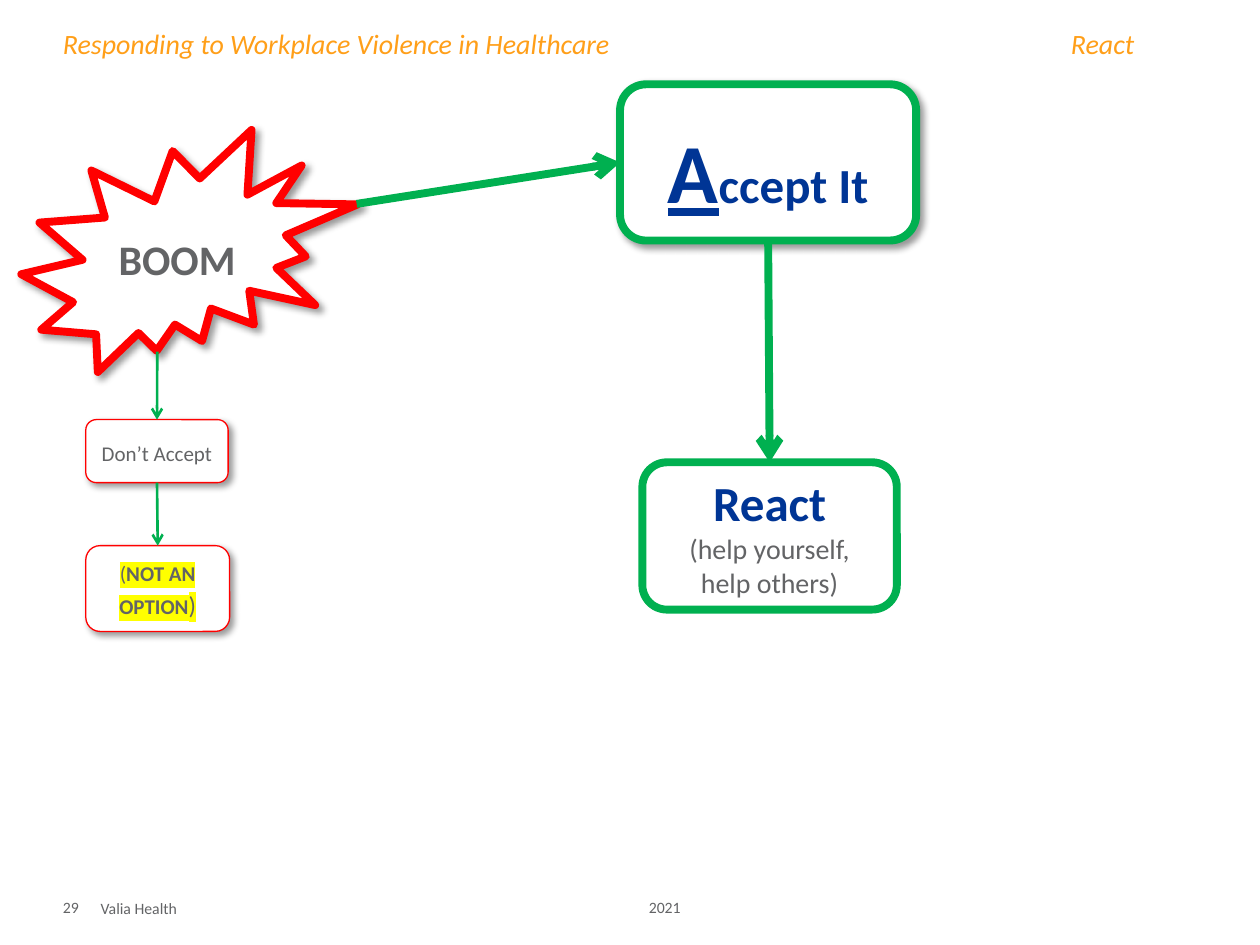
from dataclasses import dataclass

from lxml import etree
from pptx import Presentation
from pptx.dml.color import RGBColor
from pptx.enum.shapes import MSO_CONNECTOR, MSO_SHAPE
from pptx.enum.text import MSO_ANCHOR, PP_ALIGN
from pptx.oxml.ns import qn
from pptx.util import Cm, Pt

BURST, BOX = MSO_SHAPE.EXPLOSION2, MSO_SHAPE.ROUNDED_RECTANGLE
STRAIGHT = MSO_CONNECTOR.STRAIGHT
TOP, MIDDLE, BOTTOM = MSO_ANCHOR.TOP, MSO_ANCHOR.MIDDLE, MSO_ANCHOR.BOTTOM
CENTER = PP_ALIGN.CENTER
TOP_SITE, LEFT_SITE, BOTTOM_SITE = 0, 1, 2


@dataclass(frozen=True)
class Theme:
    font: str = "Calibri"
    white: str = "FFFFFF"
    orange: str = "FF9F19"
    grey: str = "636466"
    blue: str = "003595"
    red: str = "FF0000"
    green: str = "00B050"
    yellow: str = "FFFF00"
    shadow: str = "000000"
    initial: int = 48
    large: int = 28
    boom: int = 24
    title: int = 16
    paren: int = 14
    small: int = 12
    footer: int = 9
    thick: float = 4.5
    medium: float = 1.5
    thin: float = 0.75


T = Theme()


def style(font, size, color, bold=False, italic=False):
    font.name, font.size = T.font, Pt(size)
    font.bold, font.italic = bold, italic
    font.color.rgb = RGBColor.from_string(color)


def add_run(p, text, size, color, bold=False, underline=False, highlight=None):
    r = p.add_run()
    r.text = text
    style(r.font, size, color, bold)
    r.font.underline = underline
    if highlight:
        mark = etree.Element(qn("a:highlight"))
        etree.SubElement(mark, qn("a:srgbClr"), val=highlight)
        r.font.fill  # the highlight follows the fill
        r._r.rPr.find(qn("a:solidFill")).addnext(mark)


def add_text(s, text, left, top, width, height, size, color,
             anchor=TOP, italic=False, inset_top=0, tab=None):
    tf = s.shapes.add_textbox(Cm(left), Cm(top), Cm(width), Cm(height)).text_frame
    tf.word_wrap, tf.vertical_anchor = True, anchor
    tf.margin_left = tf.margin_right = tf.margin_bottom = 0
    tf.margin_top = Cm(inset_top)
    p = tf.paragraphs[0]
    p.text = text
    if tab:
        tabs = etree.SubElement(p._p.get_or_add_pPr(), qn("a:tabLst"))
        etree.SubElement(tabs, qn("a:tab"), pos=str(Cm(tab)), algn="l")
    style(p.font, size, color, italic=italic)


def add_shadow(sp):
    effects = sp._element.spPr.find(qn("a:effectLst"))
    shadow = etree.SubElement(effects, qn("a:outerShdw"), blurRad=str(Pt(4)),
                              dist=str(Pt(3)), dir="2700000", algn="tl", rotWithShape="0")
    color = etree.SubElement(shadow, qn("a:srgbClr"), val=T.shadow)
    etree.SubElement(color, qn("a:alpha"), val="40000")


def add_node(s, kind, left, top, width, height, color, weight, shadow=True):
    """Add a white outlined shape; return it with its first paragraph."""
    sp = s.shapes.add_shape(kind, Cm(left), Cm(top), Cm(width), Cm(height))
    sp.shadow.inherit = False
    sp.fill.solid()
    sp.fill.fore_color.rgb = RGBColor.from_string(T.white)
    sp.line.color.rgb = RGBColor.from_string(color)
    sp.line.width = Pt(weight)
    tf = sp.text_frame
    tf.word_wrap, tf.vertical_anchor = True, MIDDLE
    p = tf.paragraphs[0]
    p.alignment = CENTER
    if shadow:
        add_shadow(sp)
        p.line_spacing, p.space_after = 1.15, Pt(10)
    return sp, p


def add_arrow(s, weight, target, site, source=None, start=(0, 0)):
    """Join source's bottom, or a free start point, to a side of target."""
    x, y = start
    cx = s.shapes.add_connector(STRAIGHT, Cm(x), Cm(y), Cm(x), Cm(y))
    if source is not None:
        cx.begin_connect(source, BOTTOM_SITE)
    cx.end_connect(target, site)
    cx.line.color.rgb = RGBColor.from_string(T.green)
    cx.line.width = Pt(weight)
    etree.SubElement(cx.line._get_or_add_ln(), qn("a:tailEnd"), type="arrow")
    etree.SubElement(cx._element.spPr, qn("a:effectLst"))


def main():
    prs = Presentation()
    prs.slide_width, prs.slide_height = Cm(25.4), Cm(19.05)
    s = prs.slides.add_slide(prs.slide_layouts[6])

    # Title
    add_text(s, "Responding to Workplace Violence in Healthcare\tReact",
             1.27, 0.53, 22.86, 2.13, T.title, T.orange, italic=True, tab=20.32)

    # Event
    _, p = add_node(s, BURST, 0.43, 2.62, 6.78, 4.88, T.red, T.thick)
    p.text = "BOOM"
    style(p.font, T.boom, T.grey, bold=True)

    # Accept path
    accept, p = add_node(s, BOX, 12.5, 1.7, 5.97, 3.15, T.green, T.thick)
    add_run(p, "A", T.initial, T.blue, bold=True, underline=True)
    add_run(p, "ccept It", T.large, T.blue, bold=True)

    react, p = add_node(s, BOX, 12.95, 9.32, 5.13, 2.97, T.green, T.thick, shadow=False)
    p.text = "React"
    style(p.font, T.large, T.blue, bold=True)
    p = react.text_frame.add_paragraph()
    p.text, p.alignment = "(help yourself, help others)", CENTER
    style(p.font, T.title, T.grey)

    # Refusal path
    refuse, p = add_node(s, BOX, 1.73, 8.46, 2.87, 1.27, T.red, T.thin)
    p.text = "Don’t Accept"
    style(p.font, T.small, T.grey)

    no_option, p = add_node(s, BOX, 1.73, 11, 2.9, 1.73, T.red, T.thin)
    for text, size, bold in (("(", T.small, False), ("NOT AN OPTION", T.small, True),
                             (")", T.paren, False)):
        add_run(p, text, size, T.grey, bold, highlight=T.yellow)

    # Arrows
    add_arrow(s, T.thick, accept, LEFT_SITE, start=(7.19, 4.11))
    add_arrow(s, T.thick, react, TOP_SITE, source=accept)
    add_arrow(s, T.medium, refuse, TOP_SITE, start=(3.17, 7.09))
    add_arrow(s, T.medium, no_option, TOP_SITE, source=refuse)

    # Footer
    add_text(s, "2021", 13.08, 17.98, 4.06, 0.51, T.footer, T.grey, BOTTOM)
    add_text(s, "Valia Health", 2.03, 17.98, 10.16, 0.51, T.footer, T.grey, MIDDLE,
             inset_top=0.13)
    add_text(s, "29", 1.27, 17.7, 1.27, 0.79, T.footer, T.grey, BOTTOM)

    prs.save("out.pptx")


if __name__ == "__main__":
    main()
